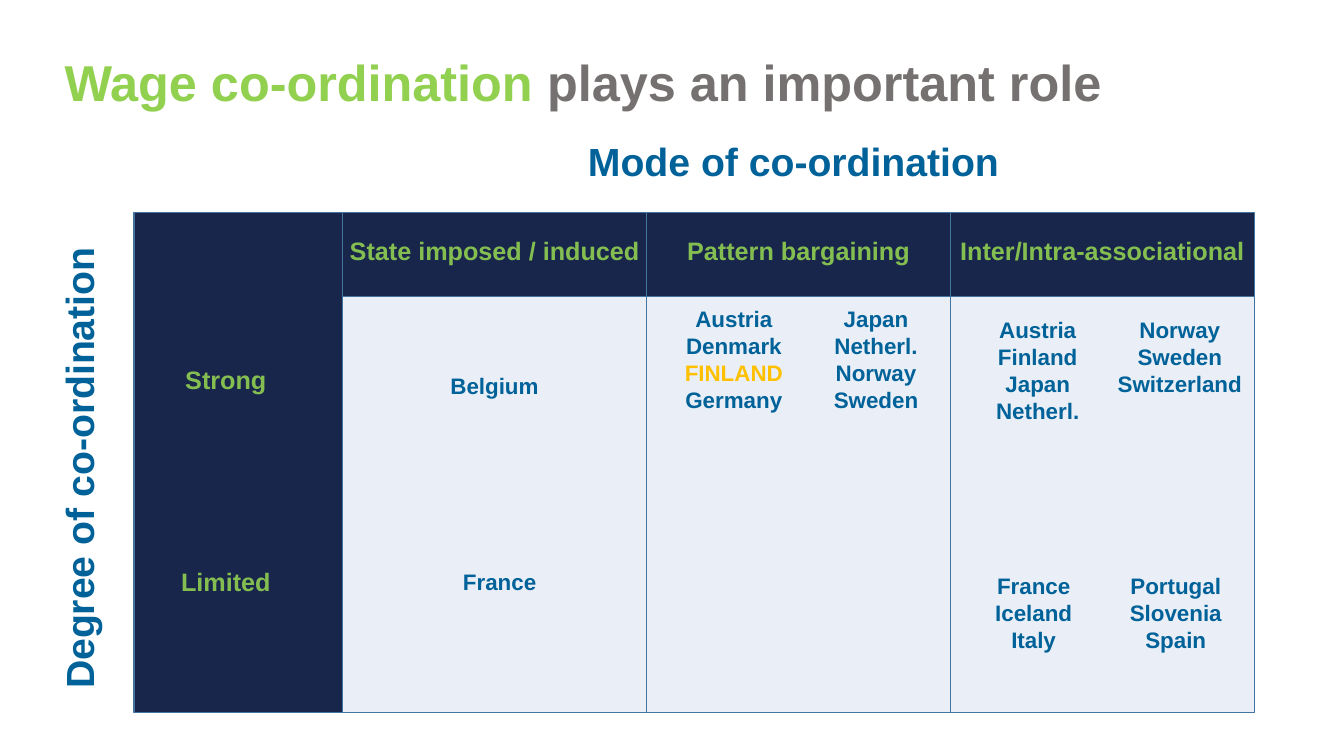
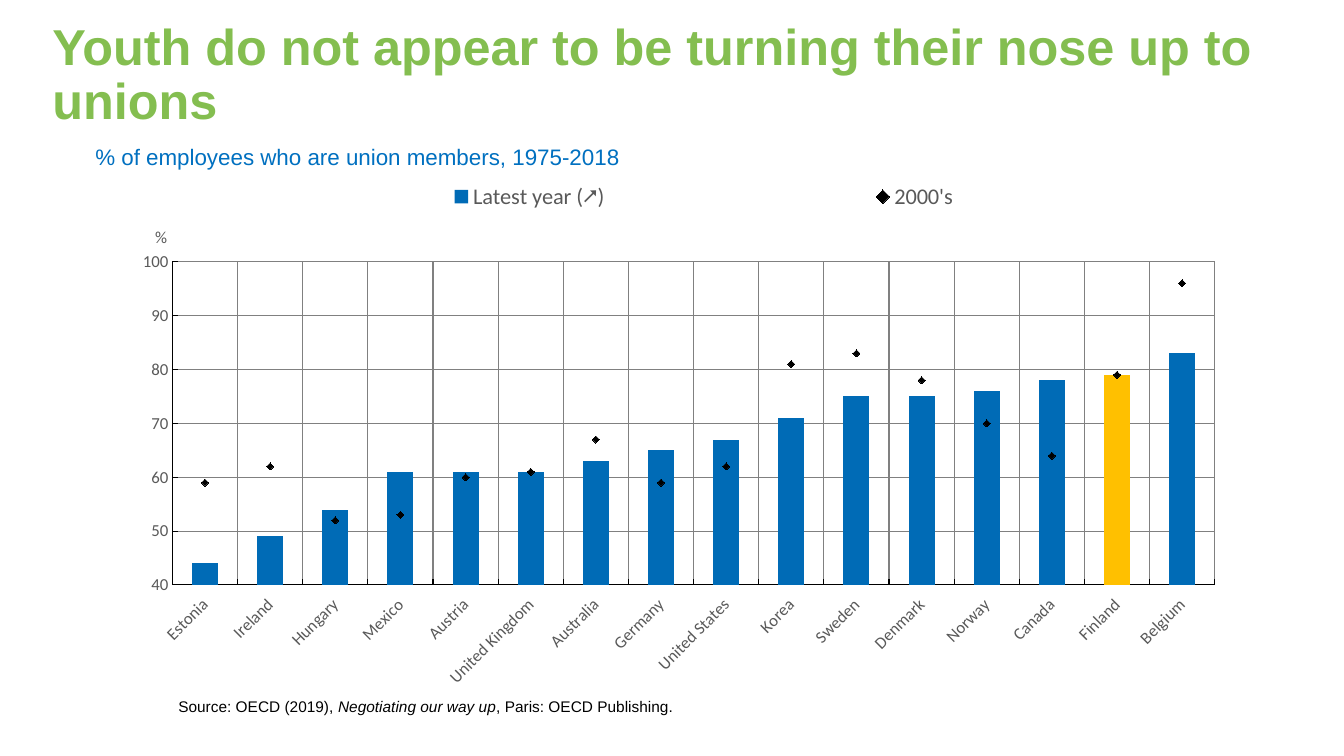
import pptx
import pptx.chart.data
import pptx.dml.color
import pptx.enum.chart
import pptx.enum.shapes
import pptx.enum.text
import pptx.oxml
import pptx.oxml.ns
import pptx.util

Inches = pptx.util.Inches
Pt = pptx.util.Pt
ALIGN = pptx.enum.text.PP_ALIGN
ANCHOR = pptx.enum.text.MSO_ANCHOR

GREEN, LIME, GREY = "84BE50", "92D050", "767171"
NAVY, PALE, EDGE = "19264C", "EAEFF7", "43739E"
TEAL, BLUE, BAR_BLUE = "006299", "0070C0", "006BB6"
AMBER, BLACK, AXIS_GREY, GRID_GREY = "FFC000", "000000", "595959", "808080"


def rgb(value):
    return pptx.dml.color.RGBColor.from_string(value)


def style_font(font, size, color, name="Arial", bold=False, italic=False):
    font.size = Pt(size)
    font.name = name
    font.bold = bold
    font.italic = italic
    font.color.rgb = rgb(color)


def write(paragraph, text, **font_format):
    run = paragraph.add_run()
    run.text = text
    style_font(run.font, **font_format)


def set_layout(element, **percents):
    for old in element.xpath("c:layout"):
        element.remove(old)
    modes = "".join(f'<c:{axis}Mode val="edge"/>' for axis in "xy")
    values = "".join(f'<c:{key} val="{value / 100:.4f}"/>' for key, value in percents.items())
    layout = pptx.oxml.parse_xml(
        f'<c:layout {pptx.oxml.ns.nsdecls("c")}><c:manualLayout>'
        f"{modes}{values}</c:manualLayout></c:layout>"
    )
    overlay = element.xpath("c:overlay")
    if overlay:
        overlay[0].addprevious(layout)
    else:
        element.insert(0, layout)


def move_to_line_plot(chart):
    bars = chart.element.xpath(".//c:barChart")[0]
    markers = bars.xpath("c:ser")[1]
    for flag in markers.xpath("c:invertIfNegative"):
        markers.remove(flag)
    axes = "".join(f'<c:axId val="{value}"/>' for value in bars.xpath("c:axId/@val"))
    lines = pptx.oxml.parse_xml(
        f'<c:lineChart {pptx.oxml.ns.nsdecls("c")}><c:grouping val="standard"/>'
        f'<c:varyColors val="0"/><c:marker val="1"/>{axes}</c:lineChart>'
    )
    lines.insert(2, markers)
    bars.addnext(lines)


class Deck:
    def __init__(self):
        self.presentation = pptx.Presentation()
        self.presentation.slide_width = Inches(13.33)
        self.presentation.slide_height = Inches(7.5)
        self.slide = None

    def add_slide(self, left, top, width, height, title_parts):
        layout = self.presentation.slide_layouts[5]
        self.slide = self.presentation.slides.add_slide(layout)
        title = self.slide.shapes.title
        title.left, title.top = Inches(left), Inches(top)
        title.width, title.height = Inches(width), Inches(height)
        frame = title.text_frame
        frame.auto_size = pptx.enum.text.MSO_AUTO_SIZE.NONE
        frame.word_wrap = True
        frame.vertical_anchor = ANCHOR.MIDDLE
        paragraph = frame.paragraphs[0]
        paragraph.alignment = ALIGN.LEFT
        paragraph.line_spacing = 0.9
        for text, color in title_parts:
            write(paragraph, text, size=36, color=color, bold=True)

    def text(self, left, top, width, height, parts, align=ALIGN.CENTER, rotation=0, **font_format):
        box = self.slide.shapes.add_textbox(Inches(left), Inches(top), Inches(width), Inches(height))
        box.rotation = rotation
        box.text_frame.word_wrap = True
        paragraph = box.text_frame.paragraphs[0]
        paragraph.alignment = align
        for text, changes in parts:
            write(paragraph, text, **{**font_format, **changes})

    def panel(self, left, top, width, height, fill, label=""):
        panel = self.slide.shapes.add_shape(
            pptx.enum.shapes.MSO_SHAPE.RECTANGLE,
            Inches(left), Inches(top), Inches(width), Inches(height),
        )
        panel.shadow.inherit = False
        panel.fill.solid()
        panel.fill.fore_color.rgb = rgb(fill)
        panel.line.color.rgb = rgb(EDGE)
        panel.line.width = Pt(1)
        if label:
            frame = panel.text_frame
            frame.margin_left = frame.margin_right = 0
            frame.margin_bottom = Inches(0.13)
            frame.vertical_anchor = ANCHOR.MIDDLE
            frame.word_wrap = False
            frame.paragraphs[0].alignment = ALIGN.CENTER
            write(frame.paragraphs[0], label, size=18, color=GREEN, bold=True)

    def country_columns(self, left, top, columns, highlight="FINLAND"):
        for index, countries in enumerate(columns):
            box = self.slide.shapes.add_textbox(
                Inches(left + 0.22 + index * 1.41), Inches(top),
                Inches(1.29), Inches(0.1 + 0.27 * len(countries)),
            )
            frame = box.text_frame
            frame.word_wrap = True
            frame.margin_left = frame.margin_right = 0
            for row, country in enumerate(countries):
                paragraph = frame.add_paragraph() if row else frame.paragraphs[0]
                paragraph.alignment = ALIGN.CENTER
                color = AMBER if country == highlight else TEAL
                write(paragraph, country, size=16, color=color, bold=True)

    def style_axis(self, axis):
        style_font(axis.tick_labels.font, 12, AXIS_GREY, "Calibri")
        axis.major_tick_mark = pptx.enum.chart.XL_TICK_MARK.INSIDE
        axis.minor_tick_mark = pptx.enum.chart.XL_TICK_MARK.NONE
        axis.has_major_gridlines = True
        for line, color in ((axis.format.line, BLACK), (axis.major_gridlines.format.line, GRID_GREY)):
            line.color.rgb = rgb(color)
            line.width = Pt(0.75)

    def bars_with_markers(self, left, top, width, height, categories, series, highlight):
        data = pptx.chart.data.CategoryChartData()
        data.categories = categories
        for name, values in series:
            data.add_series(name, values)
        chart = self.slide.shapes.add_chart(
            pptx.enum.chart.XL_CHART_TYPE.COLUMN_CLUSTERED,
            Inches(left), Inches(top), Inches(width), Inches(height), data,
        ).chart
        chart.has_title = False
        style_font(chart.font, 12, BLACK, "Calibri")
        move_to_line_plot(chart)
        bar_plot, marker_plot = chart.plots
        bar_plot.gap_width = 150
        bar_plot.vary_by_categories = False
        bars, markers = bar_plot.series[0], marker_plot.series[0]
        highlighted = bars.points[categories.index(highlight)]
        for part, color in ((bars, BAR_BLUE), (highlighted, AMBER)):
            part.format.fill.solid()
            part.format.fill.fore_color.rgb = rgb(color)
        markers.smooth = False
        markers.format.line.fill.background()
        markers.marker.style = pptx.enum.chart.XL_MARKER_STYLE.DIAMOND
        markers.marker.size = 5
        markers.marker.format.fill.solid()
        markers.marker.format.fill.fore_color.rgb = rgb(BLACK)
        markers.marker.format.line.color.rgb = rgb(BLACK)

        countries, percent = chart.category_axis, chart.value_axis
        self.style_axis(countries)
        self.style_axis(percent)
        countries.tick_label_position = pptx.enum.chart.XL_TICK_LABEL_POSITION.LOW
        chart.element.xpath(".//c:catAx/c:txPr/a:bodyPr")[0].set("rot", "-2700000")
        percent.minimum_scale, percent.maximum_scale = 40, 100
        percent.major_unit = 10
        unit = percent.axis_title.text_frame.paragraphs[0]
        write(unit, "%", size=12, color=AXIS_GREY, name="Calibri")
        unit_title = chart.element.xpath(".//c:valAx/c:title")[0]
        unit_body = unit_title.xpath(".//a:bodyPr")[0]
        unit_body.set("rot", "0")
        unit_body.set("vert", "horz")
        set_layout(unit_title, x=1.75, y=10.5)

        chart.has_legend = True
        chart.legend.position = pptx.enum.chart.XL_LEGEND_POSITION.TOP
        chart.legend.include_in_layout = False
        style_font(chart.legend.font, 16, AXIS_GREY, "Calibri")
        set_layout(chart.element.xpath(".//c:legend")[0], x=5.3, y=1.6, w=95.5, h=8)
        set_layout(chart.element.xpath(".//c:plotArea")[0], x=0.9, y=16.1, w=98.9, h=82.9)


def build_coordination(deck):
    deck.add_slide(0.54, 0.12, 12.29, 1.45,
                   [("Wage co-ordination ", LIME), ("plays an important role", GREY)])
    modes = ["State imposed / induced", "Pattern bargaining", "Inter/Intra-associational"]
    grid_left, grid_right, grid_top = 3.4, 12.44, 2.11
    header_height, body_height = 0.83, 4.13
    mode_width = (grid_right - grid_left) / len(modes)
    lefts = [grid_left + index * mode_width for index in range(len(modes))]
    deck.panel(1.33, grid_top, 2.07, header_height + body_height, NAVY)
    for left, mode in zip(lefts, modes):
        deck.panel(left, grid_top, mode_width, header_height, NAVY, mode)
        deck.panel(left, grid_top + header_height, mode_width, body_height, PALE)
    headings = dict(size=28, color=TEAL, bold=True)
    deck.text(3.35, 1.31, 9.04, 0.57, [("Mode of co-ordination", {})], **headings)
    deck.text(-1.7, 4.36, 4.96, 0.57, [("Degree of co-ordination", {})], rotation=270, **headings)
    for degree, degree_top, country, left, top in (
        ("Strong", 3.57, "Belgium", 3.4, 3.64),
        ("Limited", 5.57, "France", 3.45, 5.59),
    ):
        deck.text(1.57, degree_top, 1.34, 0.4, [(degree, {})], size=18, color=GREEN, bold=True)
        deck.text(left, top, 3.01, 0.37, [(country, {})], size=16, color=TEAL, bold=True)
    deck.country_columns(lefts[1], 2.98, [
        ["Austria", "Denmark", "FINLAND", "Germany"],
        ["Japan", "Netherl.", "Norway", "Sweden"],
    ])
    deck.country_columns(lefts[2], 3.09, [
        ["Austria", "Finland", "Japan", "Netherl."],
        ["Norway", "Sweden", "Switzerland"],
    ])
    deck.country_columns(lefts[2] - 0.04, 5.63, [
        ["France", "Iceland", "Italy"],
        ["Portugal", "Slovenia", "Spain"],
    ])


def build_youth(deck):
    deck.add_slide(0.42, 0.29, 13, 0.93,
                   [("Youth do not appear to be turning their nose up to unions", GREEN)])
    deck.text(0.42, 1.37, 6.25, 0.37,
              [("% of employees who are union members, 1975-2018", {})], size=16, color=BLUE)
    deck.text(1.67, 6.87, 10, 0.29, [
        ("Source: OECD (2019), ", {}),
        ("Negotiating our way up", {"italic": True}),
        (", Paris: OECD Publishing.", {}),
    ], align=ALIGN.LEFT, size=11, color=BLACK)
    countries = ["Estonia", "Ireland", "Hungary", "Mexico", "Austria", "United Kingdom",
                 "Australia", "Germany", "United States", "Korea", "Sweden", "Denmark",
                 "Norway", "Canada", "Finland", "Belgium"]
    latest = [44, 49, 54, 61, 61, 61, 63, 65, 67, 71, 75, 75, 76, 78, 79, 83]
    earlier = [59, 62, 52, 53, 60, 61, 67, 59, 62, 81, 83, 78, 70, 64, 79, 96]
    deck.bars_with_markers(1.32, 1.66, 10.75, 5.21, countries,
                           [("Latest year (⭧)", latest), ("2000's", earlier)], "Finland")


def main():
    deck = Deck()
    build_coordination(deck)
    build_youth(deck)
    deck.presentation.save("out.pptx")


if __name__ == "__main__":
    main()
